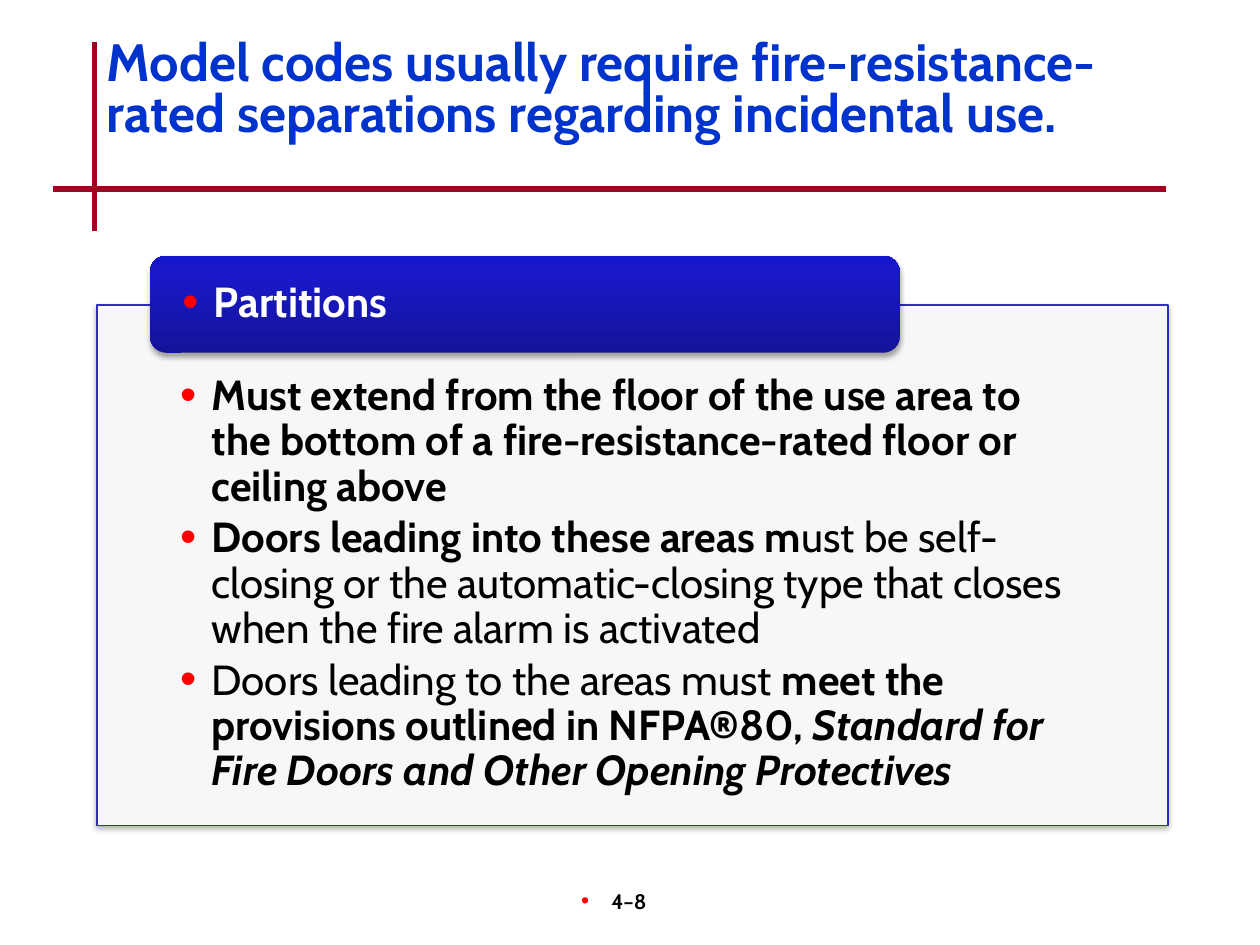
from copy import deepcopy

from lxml.etree import SubElement
from pptx import Presentation
from pptx.dml.color import RGBColor
from pptx.enum.shapes import MSO_CONNECTOR, MSO_SHAPE
from pptx.enum.text import MSO_ANCHOR, PP_ALIGN
from pptx.oxml.ns import qn
from pptx.util import Inches, Pt

FONT = "Cabin"
RULE_RED, BULLET_RED = "A50021", "FF0000"
TITLE_BLUE, PANEL_BLUE = "0033CC", "2E2EB9"
BLACK, WHITE = "000000", "FFFFFF"
HEADER_STOPS = [(0, "13139A"), (0.8, "1919C8"), (1, "1515CC")]

TITLE = ("Model codes usually require fire-resistance-rated separations "
         "regarding incidental use.")
# Each requirement is a list of (text, bold, italic) runs.
REQUIREMENTS = [
    [("Must extend from the floor of the use area to the bottom of a "
      "fire-resistance-rated floor or ceiling above", True, False)],
    [("Doors leading into these areas m", True, False),
     ("ust be self-closing or the automatic-closing type that closes "
      "when the fire alarm is activated", False, False)],
    [("Doors leading to the areas must ", False, False),
     ("meet the provisions outlined in NFPA®80, ", True, False),
     ("Standard for Fire Doors and Other Opening Protectives", True, True)],
]


def color(hex_code):
    return RGBColor.from_string(hex_code)


def add_rule(slide, x1, y1, x2, y2):
    rule = slide.shapes.add_connector(
        MSO_CONNECTOR.STRAIGHT, Inches(x1), Inches(y1), Inches(x2), Inches(y2))
    rule.line.color.rgb = color(RULE_RED)
    rule.line.width = Pt(3)
    SubElement(rule._element.spPr, qn("a:effectLst"))


def add_soft_shadow(shape):
    shape.shadow.inherit = False
    effects = shape._element.spPr.find(qn("a:effectLst"))
    shadow = SubElement(effects, qn("a:outerShdw"), blurRad=str(Pt(3.1)),
                        dist=str(Pt(1.8)), dir="5400000", rotWithShape="0")
    black = SubElement(shadow, qn("a:srgbClr"), val=BLACK)
    SubElement(black, qn("a:alpha"), val="35000")


def set_frame(shape, anchor, left, top, right, bottom):
    frame = shape.text_frame
    frame.word_wrap = True
    frame.vertical_anchor = anchor
    frame.margin_left, frame.margin_top = Inches(left), Inches(top)
    frame.margin_right, frame.margin_bottom = Inches(right), Inches(bottom)
    return frame


def add_bullet(paragraph, margin=0.25, hang=0.25):
    properties = paragraph._p.get_or_add_pPr()
    properties.set("marL", str(Inches(margin)))
    properties.set("indent", str(-Inches(hang)))
    bullet_color = SubElement(properties, qn("a:buClr"))
    SubElement(bullet_color, qn("a:srgbClr"), val=BULLET_RED)
    SubElement(properties, qn("a:buSzPct"), val="110000")
    SubElement(properties, qn("a:buFont"), typeface="Arial")
    SubElement(properties, qn("a:buChar"), char="•")


def write_runs(paragraph, runs, size, hex_code, align=PP_ALIGN.LEFT, spacing=1.0):
    paragraph.alignment = align
    paragraph.line_spacing = spacing
    for text, bold, italic in runs:
        run = paragraph.add_run()
        run.text = text
        font = run.font
        font.name, font.size = FONT, Pt(size)
        font.bold, font.italic = bold, italic
        font.color.rgb = color(hex_code)


def add_title(slide):
    box = slide.shapes.add_textbox(Inches(0.75), Inches(0.28), Inches(8.5), Inches(1))
    frame = set_frame(box, MSO_ANCHOR.TOP, 0.1, 0.05, 0.1, 0.05)
    write_runs(frame.paragraphs[0], [(TITLE, True, False)], 30, TITLE_BLUE, spacing=0.8)


def add_page_number(slide):
    box = slide.shapes.add_textbox(Inches(3.92), Inches(7), Inches(2.08), Inches(0.5))
    frame = set_frame(box, MSO_ANCHOR.TOP, 0.1, 0.05, 0.1, 0.05)
    number = frame.paragraphs[0]
    add_bullet(number, margin=0.05, hang=0.24)
    write_runs(number, [("4–8", True, False)], 12, BLACK, PP_ALIGN.CENTER)


def add_requirements_panel(slide):
    panel = slide.shapes.add_shape(
        MSO_SHAPE.RECTANGLE, Inches(0.77), Inches(2.42), Inches(8.5), Inches(4.13))
    panel.fill.solid()
    panel.fill.fore_color.rgb = color(WHITE)
    fill_color = panel._element.spPr.find(qn("a:solidFill")).find(qn("a:srgbClr"))
    SubElement(fill_color, qn("a:alpha"), val="90000")
    panel.line.color.rgb = color(PANEL_BLUE)
    panel.line.width = Pt(0.75)
    add_soft_shadow(panel)

    frame = set_frame(panel, MSO_ANCHOR.TOP, 0.66, 0.55, 0.66, 0.19)
    for index, runs in enumerate(REQUIREMENTS):
        requirement = frame.add_paragraph() if index else frame.paragraphs[0]
        add_bullet(requirement)
        write_runs(requirement, runs, 24, BLACK, spacing=0.9)
        requirement.space_after = Pt(3.6)


def add_header(slide):
    header = slide.shapes.add_shape(
        MSO_SHAPE.ROUNDED_RECTANGLE, Inches(1.19), Inches(2.03), Inches(5.95), Inches(0.77))
    header.fill.gradient()
    header.fill.gradient_angle = 90
    stop_list = header._element.spPr.find(qn("a:gradFill")).find(qn("a:gsLst"))
    stop_list.append(deepcopy(stop_list[0]))
    for stop, (position, hex_code) in zip(header.fill.gradient_stops, HEADER_STOPS):
        stop.position = position
        stop.color.rgb = color(hex_code)
    header.line.fill.background()
    add_soft_shadow(header)

    frame = set_frame(header, MSO_ANCHOR.MIDDLE, 0.22, 0, 0.22, 0)
    heading = frame.paragraphs[0]
    add_bullet(heading)
    write_runs(heading, [("Partitions", True, False)], 24, WHITE, spacing=0.9)


def main():
    presentation = Presentation()
    presentation.slide_width, presentation.slide_height = Inches(10), Inches(7.5)
    slide = presentation.slides.add_slide(presentation.slide_layouts[6])
    add_rule(slide, 0.75, 0.33, 0.75, 1.83)
    add_rule(slide, 0.42, 1.5, 9.25, 1.5)
    add_page_number(slide)
    add_title(slide)
    add_requirements_panel(slide)
    add_header(slide)
    presentation.save("out.pptx")


if __name__ == "__main__":
    main()
